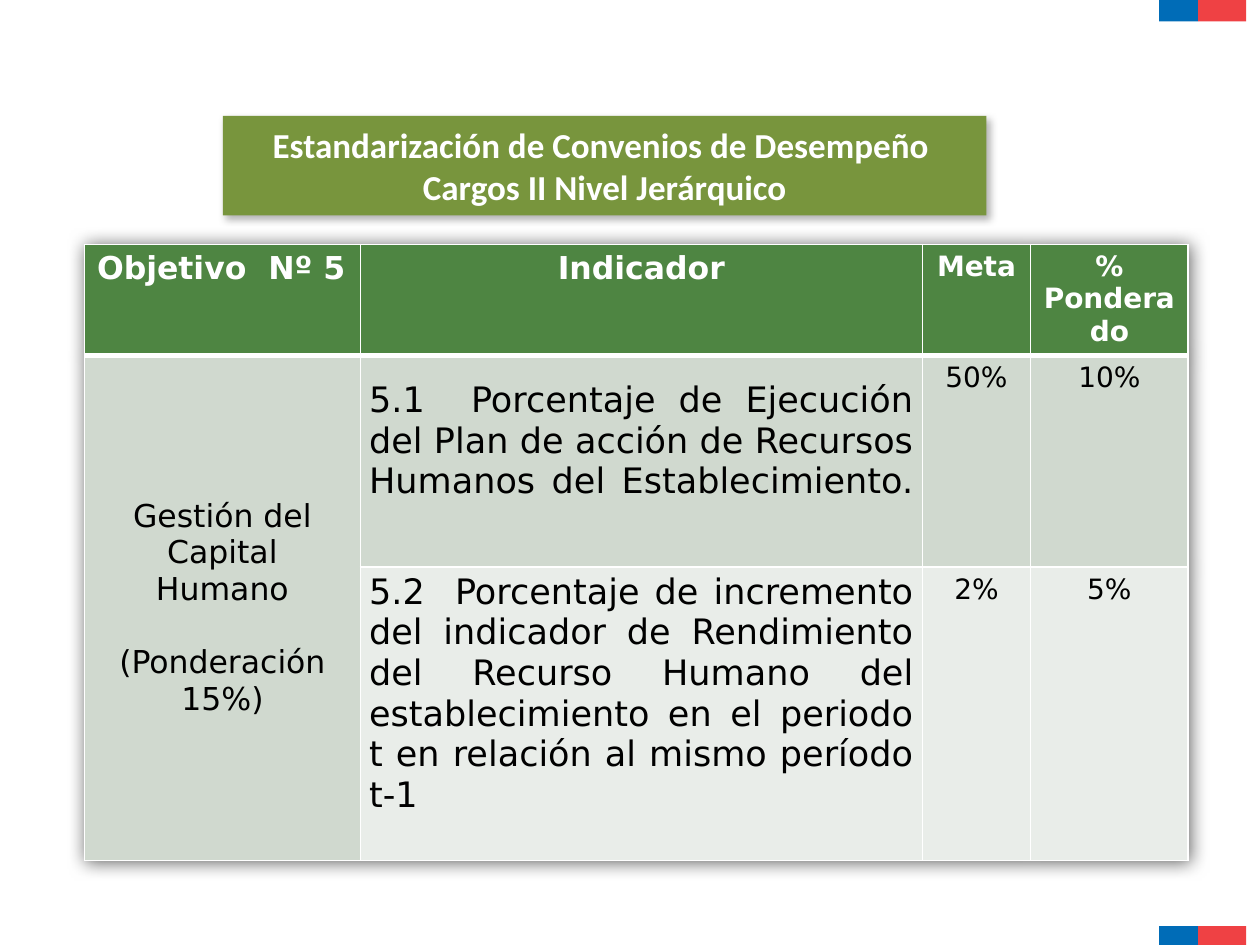
import lxml.etree
import pptx
import pptx.dml.color
import pptx.enum.shapes
import pptx.enum.text
import pptx.oxml.ns
import pptx.util

Inches = pptx.util.Inches
Pt = pptx.util.Pt
RGBColor = pptx.dml.color.RGBColor
Align = pptx.enum.text.PP_ALIGN
Anchor = pptx.enum.text.MSO_ANCHOR
qn = pptx.oxml.ns.qn

WHITE = RGBColor(0xFF, 0xFF, 0xFF)
BLACK = RGBColor(0x00, 0x00, 0x00)
BLUE = RGBColor(0x00, 0x6C, 0xB7)
RED = RGBColor(0xEF, 0x41, 0x44)
OLIVE = RGBColor(0x78, 0x95, 0x3D)
HEADER_GREEN = RGBColor(0x4E, 0x85, 0x42)
BAND_DARK = RGBColor(0xD0, 0xD9, 0xCF)
BAND_LIGHT = RGBColor(0xE9, 0xED, 0xE9)

TABLE_FONT = "DejaVu Sans"
COLUMN_WIDTHS = (2.19, 4.46, 0.86, 1.25)
ROW_HEIGHTS = (0.88, 1.68, 2.33)
ROW_FILLS = (HEADER_GREEN, BAND_DARK, BAND_LIGHT)
HEADERS = (("Objetivo  Nº 5", 18), ("Indicador", 18), ("Meta", 16), ("% Ponderado", 16))
OBJECTIVE = ("Gestión del Capital Humano", "(Ponderación 15%)")
INDICATORS = (
    ("5.1  Porcentaje de Ejecución del Plan de acción de Recursos Humanos "
     "del Establecimiento. ", "50%", "10%"),
    ("5.2  Porcentaje de incremento del indicador de Rendimiento del Recurso "
     "Humano del establecimiento en el periodo t en relación al mismo período t-1",
     "2%", "5%"),
)


def add_rectangle(slide, left, top, width, height, color):
    shape = slide.shapes.add_shape(
        pptx.enum.shapes.MSO_SHAPE.RECTANGLE,
        Inches(left), Inches(top), Inches(width), Inches(height))
    shape.shadow.inherit = False
    shape.fill.solid()
    shape.fill.fore_color.rgb = color
    shape.line.fill.background()
    return shape


def add_flag_bar(slide, top, height):
    add_rectangle(slide, 9.2, top, 0.31, height, BLUE)
    add_rectangle(slide, 9.51, top, 0.38, height, RED)


def add_shadow(effects, blur, distance, angle, opacity):
    """Put a black outer shadow in an a:effectLst; angle in degrees, opacity in percent."""
    shadow = lxml.etree.SubElement(
        effects, qn("a:outerShdw"), blurRad=str(Pt(blur)), dist=str(Pt(distance)),
        dir=str(angle * 60000), algn="tl", rotWithShape="0")
    color = lxml.etree.SubElement(shadow, qn("a:srgbClr"), val=str(BLACK))
    lxml.etree.SubElement(color, qn("a:alpha"), val=str(opacity * 1000))


def style_paragraph(paragraph, size, color, bold, font, alignment):
    paragraph.alignment = alignment
    paragraph.font.size = Pt(size)
    paragraph.font.color.rgb = color
    paragraph.font.bold = bold
    paragraph.font.name = font


def add_title(slide):
    shape = add_rectangle(slide, 1.77, 0.92, 6.06, 0.79, OLIVE)
    add_shadow(shape.element.spPr.find(qn("a:effectLst")), 4.5, 2.6, 53, 30)
    frame = shape.text_frame
    frame.word_wrap = True
    frame.vertical_anchor = Anchor.MIDDLE
    paragraph = frame.paragraphs[0]
    paragraph.text = "Estandarización de Convenios de Desempeño \vCargos II Nivel Jerárquico"
    style_paragraph(paragraph, 20, WHITE, True, "Calibri", Align.CENTER)


def set_borders(cell, top, bottom):
    """Give a cell white borders, 1 pt at the sides."""
    properties = cell._tc.get_or_add_tcPr()
    widths = (("a:lnL", 1), ("a:lnR", 1), ("a:lnT", top), ("a:lnB", bottom))
    for index, (tag, width) in enumerate(widths):
        line = lxml.etree.Element(qn(tag), w=str(Pt(width)))
        fill = lxml.etree.SubElement(line, qn("a:solidFill"))
        lxml.etree.SubElement(fill, qn("a:srgbClr"), val=str(WHITE))
        properties.insert(index, line)


def fill_cell(cell, text, size, color=BLACK, bold=False, alignment=Align.CENTER):
    cell.text = text
    for paragraph in cell.text_frame.paragraphs:
        style_paragraph(paragraph, size, color, bold, TABLE_FONT, alignment)


def fill_indicator(cell, text):
    fill_cell(cell, text, 20, alignment=Align.JUSTIFY)
    cell.vertical_anchor = Anchor.MIDDLE
    cell.margin_left = cell.margin_right = Inches(0.07)
    cell.margin_top = 0
    cell.margin_bottom = Inches(0.32)


def add_indicator_table(slide):
    table = slide.shapes.add_table(
        len(ROW_HEIGHTS), len(COLUMN_WIDTHS), Inches(0.67), Inches(1.94),
        Inches(sum(COLUMN_WIDTHS)), Inches(sum(ROW_HEIGHTS))).table
    effects = lxml.etree.Element(qn("a:effectLst"))
    add_shadow(effects, 10, 1, 45, 60)
    table._tbl.tblPr.insert(0, effects)
    for column, width in zip(table.columns, COLUMN_WIDTHS):
        column.width = Inches(width)
    for index, (height, color) in enumerate(zip(ROW_HEIGHTS, ROW_FILLS)):
        table.rows[index].height = Inches(height)
        for cell in table.rows[index].cells:
            cell.fill.solid()
            cell.fill.fore_color.rgb = color
            set_borders(cell, 3 if index == 1 else 1, 3 if index == 0 else 1)

    for column, (text, size) in enumerate(HEADERS):
        alignment = Align.LEFT if column == 0 else Align.CENTER
        fill_cell(table.cell(0, column), text, size, WHITE, True, alignment)

    objective = table.cell(1, 0)
    objective.merge(table.cell(2, 0))
    fill_cell(objective, "\n".join(OBJECTIVE), 18)
    objective.vertical_anchor = Anchor.MIDDLE
    objective.text_frame.paragraphs[1].space_before = Pt(21)

    for row, (indicator, goal, weight) in enumerate(INDICATORS, start=1):
        fill_indicator(table.cell(row, 1), indicator)
        fill_cell(table.cell(row, 2), goal, 16)
        fill_cell(table.cell(row, 3), weight, 16)


def main():
    presentation = pptx.Presentation()
    presentation.slide_width = Inches(10)
    presentation.slide_height = Inches(7.5)
    slide = presentation.slides.add_slide(presentation.slide_layouts[6])
    add_flag_bar(slide, 0, 0.17)
    add_flag_bar(slide, 7.35, 0.15)
    add_indicator_table(slide)
    add_title(slide)
    presentation.save("out.pptx")


if __name__ == "__main__":
    main()
